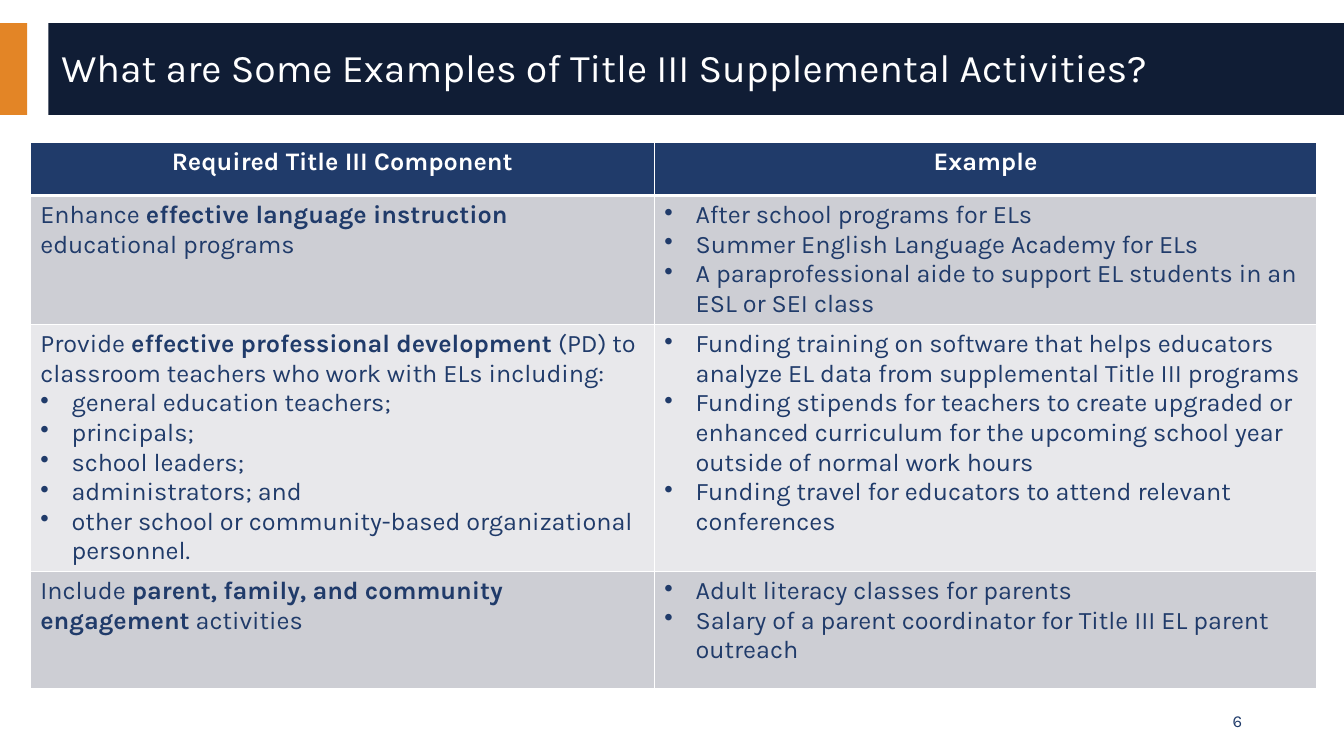
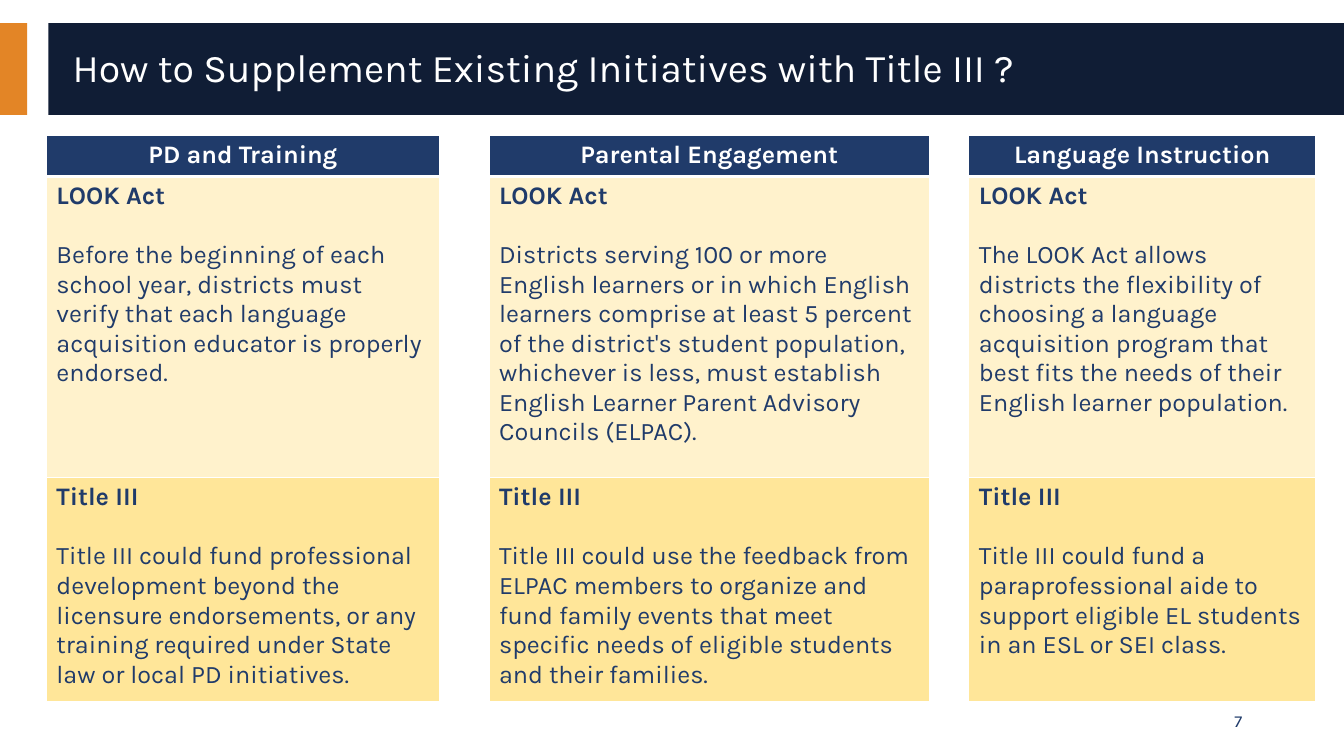
"""Build two slides on Title III supplemental activities and initiatives."""
from dataclasses import dataclass
from typing import Any, Optional

import pptx
import pptx.dml.color
import pptx.enum.shapes
import pptx.enum.text
import pptx.oxml
import pptx.oxml.ns
import pptx.util

Inches = pptx.util.Inches
Pt = pptx.util.Pt
Align = pptx.enum.text.PP_ALIGN
Anchor = pptx.enum.text.MSO_ANCHOR


@dataclass(frozen=True)
class Theme:
    font: str = "Karla"
    white: str = "FFFFFF"
    orange: str = "E38526"
    navy: str = "101D35"
    blue: str = "203B6A"
    gray: str = "CDCED4"
    light_gray: str = "E8E8EB"
    cream: str = "FFF2CC"
    yellow: str = "FFE699"
    title_size: float = 28
    body_size: float = 18
    number_size: float = 12
    body_gap: float = 21
    bullet_indent: float = 0.31


THEME = Theme()


@dataclass(frozen=True)
class Band:
    left: float
    width: float
    color: str


@dataclass(frozen=True)
class Line:
    text: str
    bullet: bool = False
    space_before: float = 0


@dataclass(frozen=True)
class Cell:
    lines: tuple[Line, ...]
    fill: str
    header: bool = False


@dataclass(frozen=True)
class TableBlock:
    left: float
    top: float
    columns: tuple[float, ...]
    rows: tuple[float, ...]
    cells: list[list[Cell]]


@dataclass(frozen=True)
class Page:
    number: int
    title: str
    title_left: float
    table: TableBlock


BANDS = (Band(0, 0.27, THEME.orange), Band(0.48, 12.86, THEME.navy))


def header(text: str) -> Cell:
    """Return a blue heading cell."""
    return Cell((Line(text),), THEME.blue, header=True)


def listing(fill: str, *bullets: str, lead: str = "") -> Cell:
    """Return a cell with an optional lead sentence and bullets."""
    leads = (Line(lead),) if lead else ()
    return Cell(leads + tuple(Line(text, bullet=True) for text in bullets), fill)


def topic(fill: str, heading: str, body: str) -> Cell:
    """Return a cell with a bold heading and a spaced body."""
    return Cell((Line(f"**{heading}**"), Line(body, space_before=THEME.body_gap)), fill)


def with_gaps(cells: list[Cell]) -> list[Cell]:
    """Return the cells with a white spacer between neighbours."""
    spacer = Cell((), THEME.white)
    return [item for cell in cells for item in (cell, spacer)][:-1]


ACTIVITIES = [
    [header("Required Title III Component"), header("Example")],
    [
        listing(THEME.gray, lead="Enhance **effective language instruction** educational programs"),
        listing(
            THEME.gray,
            "After school programs for ELs",
            "Summer English Language Academy for ELs",
            "A paraprofessional aide to support EL students in an ESL or SEI class",
        ),
    ],
    [
        listing(
            THEME.light_gray,
            "general education teachers;",
            "principals;",
            "school leaders;",
            "administrators; and",
            "other school or community-based organizational personnel.",
            lead="Provide **effective professional development** (PD) to classroom teachers "
            "who work with ELs including:",
        ),
        listing(
            THEME.light_gray,
            "Funding training on software that helps educators analyze EL data from "
            "supplemental Title III programs",
            "Funding stipends for teachers to create upgraded or enhanced curriculum for "
            "the upcoming school year outside of normal work hours",
            "Funding travel for educators to attend relevant conferences",
        ),
    ],
    [
        listing(THEME.gray, lead="Include **parent, family, and community engagement** activities"),
        listing(
            THEME.gray,
            "Adult literacy classes for parents",
            "Salary of a parent coordinator for Title III EL parent outreach",
        ),
    ],
]

LOOK_ACT = (
    "Before the beginning of each school year, districts must verify that each language "
    "acquisition educator is properly endorsed.",
    "Districts serving 100 or more English learners or in which English learners comprise "
    "at least 5 percent of the district's student population, whichever is less, must "
    "establish English Learner Parent Advisory Councils (ELPAC).",
    "The LOOK Act allows districts the flexibility of choosing a language acquisition "
    "program that best fits the needs of their English learner population.",
)
TITLE_III = (
    "Title III could fund professional development beyond the licensure endorsements, or "
    "any training required under State law or local PD initiatives.",
    "Title III could use the feedback from ELPAC members to organize and fund family "
    "events that meet specific needs of eligible students and their families.",
    "Title III could fund a paraprofessional aide to support eligible EL students in an "
    "ESL or SEI class.",
)
INITIATIVES = [
    with_gaps([header(text) for text in ("PD and Training", "Parental Engagement", "Language Instruction")]),
    with_gaps([topic(THEME.cream, "LOOK Act", text) for text in LOOK_ACT]),
    with_gaps([topic(THEME.yellow, "Title III", text) for text in TITLE_III]),
]

PAGES = (
    Page(
        6,
        "What are Some Examples of Title III Supplemental Activities?",
        0.51,
        TableBlock(0.3, 1.41, (6.19, 6.57), (0.53, 1.28, 2.45, 1.16), ACTIVITIES),
    ),
    Page(
        7,
        "How to Supplement Existing Initiatives with Title III ?",
        0.62,
        TableBlock(0.46, 1.34, (3.9, 0.49, 4.37, 0.39, 3.44), (0.41, 2.99, 2.22), INITIATIVES),
    ),
)


def rgb(color: str) -> pptx.dml.color.RGBColor:
    """Return the colour object for a hex code."""
    return pptx.dml.color.RGBColor.from_string(color)


def write_text(
    paragraph: Any,
    text: str,
    *,
    size: float = THEME.body_size,
    color: str = THEME.blue,
    bold: bool = False,
    align: Any = Align.LEFT,
    line_spacing: Optional[float] = None,
    space_before: float = 0,
    bullet: bool = False,
) -> None:
    """Write formatted text, with double asterisks toggling bold."""
    paragraph.alignment = align
    paragraph.space_before = Pt(space_before)
    if line_spacing:
        paragraph.line_spacing = line_spacing
    if bullet:
        properties = paragraph._p.get_or_add_pPr()
        indent = Inches(THEME.bullet_indent)
        properties.set("marL", str(indent))
        properties.set("indent", str(-indent))
        mark = pptx.oxml.parse_xml(f'<a:buChar {pptx.oxml.ns.nsdecls("a")} char="•"/>')
        properties.append(mark)
    for index, piece in enumerate(text.split("**")):
        if piece:
            run = paragraph.add_run()
            run.text = piece
            run.font.name = THEME.font
            run.font.size = Pt(size)
            run.font.bold = bold or index % 2 == 1
            run.font.color.rgb = rgb(color)


def add_bands(slide: Any) -> None:
    """Draw the title bands and place them on the slide's layout."""
    layout_tree = slide.slide_layout.shapes._spTree
    for index, band in enumerate(BANDS):
        shape = slide.shapes.add_shape(
            pptx.enum.shapes.MSO_SHAPE.RECTANGLE,
            Inches(band.left), Inches(0.23), Inches(band.width), Inches(0.91),
        )
        shape.shadow.inherit = False
        shape.fill.solid()
        shape.fill.fore_color.rgb = rgb(band.color)
        shape.line.fill.background()
        shape._element.nvSpPr.cNvPr.set("id", str(100 + index))
        layout_tree.insert(2 + index, shape._element)


def set_borders(cell: Any, is_header: bool) -> None:
    """Give a cell white borders, thicker below a header."""
    properties = cell._tc.get_or_add_tcPr()
    for side in "LRTB":
        width = Pt(3 if is_header and side == "B" else 1)
        properties.append(pptx.oxml.parse_xml(
            f'<a:ln{side} {pptx.oxml.ns.nsdecls("a")} w="{width}"><a:solidFill>'
            f'<a:srgbClr val="{THEME.white}"/></a:solidFill></a:ln{side}>'
        ))


def fill_cell(cell: Any, content: Cell, is_header: bool) -> None:
    """Format one table cell and write its lines."""
    set_borders(cell, is_header)
    cell.fill.solid()
    cell.fill.fore_color.rgb = rgb(content.fill)
    for index, line in enumerate(content.lines):
        paragraph = cell.text_frame.add_paragraph() if index else cell.text_frame.paragraphs[0]
        write_text(
            paragraph, line.text,
            color=THEME.white if content.header else THEME.blue,
            bold=content.header,
            align=Align.CENTER if content.header else Align.LEFT,
            space_before=line.space_before,
            bullet=line.bullet,
        )


def add_table(slide: Any, block: TableBlock) -> None:
    """Draw a table with its column widths, row heights and cells."""
    table = slide.shapes.add_table(
        len(block.rows), len(block.columns), Inches(block.left), Inches(block.top),
        Inches(sum(block.columns)), Inches(sum(block.rows)),
    ).table
    for column, width in zip(table.columns, block.columns):
        column.width = Inches(width)
    for row_index, (row, height) in enumerate(zip(table.rows, block.rows)):
        row.height = Inches(height)
        for cell, content in zip(row.cells, block.cells[row_index]):
            fill_cell(cell, content, row_index == 0)


def add_title(slide: Any, text: str, left: float) -> None:
    """Move and format the title placeholder."""
    title = slide.shapes.title
    title.left, title.top = Inches(left), Inches(0.32)
    title.width, title.height = Inches(10.97), Inches(0.74)
    title.text_frame.word_wrap = True
    title.text_frame.auto_size = pptx.enum.text.MSO_AUTO_SIZE.NONE
    title.text_frame.vertical_anchor = Anchor.MIDDLE
    write_text(title.text_frame.paragraphs[0], text, size=THEME.title_size, color=THEME.white, line_spacing=0.9)


def add_page_number(slide: Any, number: int) -> None:
    """Write the page number at the lower right."""
    box = slide.shapes.add_textbox(Inches(9.42), Inches(6.95), Inches(3), Inches(0.4))
    box.text_frame.word_wrap = True
    box.text_frame.vertical_anchor = Anchor.MIDDLE
    write_text(box.text_frame.paragraphs[0], str(number), size=THEME.number_size, align=Align.RIGHT)


def main() -> None:
    """Build and save the presentation."""
    presentation = pptx.Presentation()
    presentation.slide_width, presentation.slide_height = Inches(13.33), Inches(7.5)
    layout = presentation.slide_layouts.get_by_name("Title Only")
    for index, page in enumerate(PAGES):
        slide = presentation.slides.add_slide(layout)
        if index == 0:
            add_bands(slide)
        add_title(slide, page.title, page.title_left)
        add_table(slide, page.table)
        add_page_number(slide, page.number)
    presentation.save("out.pptx")


if __name__ == "__main__":
    main()
